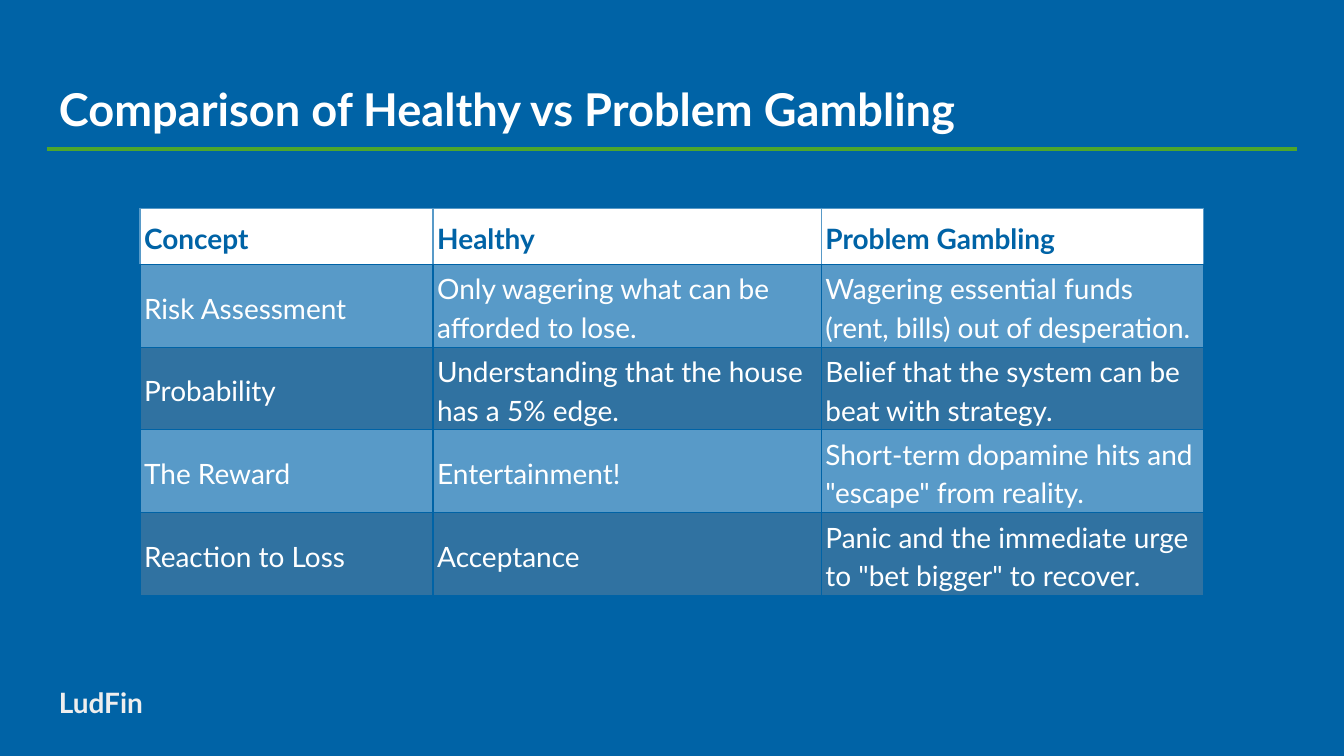
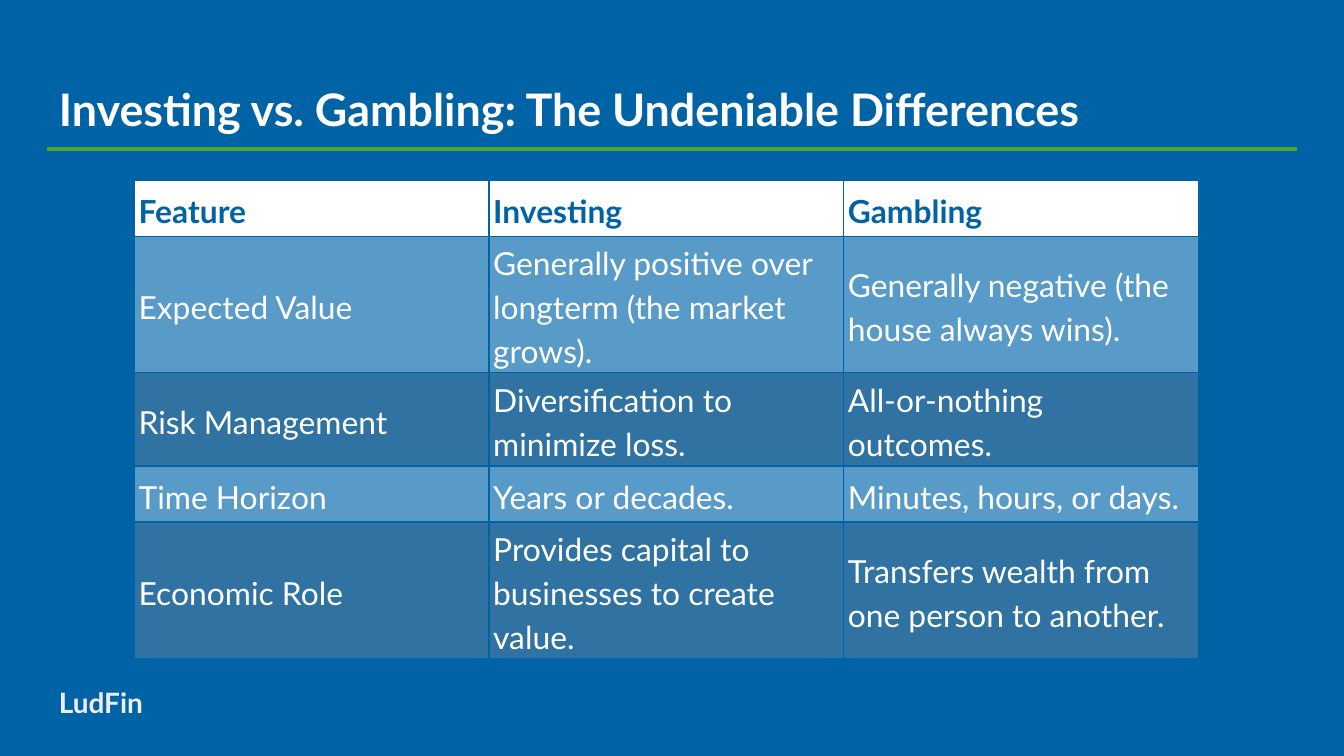
"""Build two slides that compare gambling habits and investing in tables."""
from dataclasses import dataclass

import pptx
import pptx.dml.color
import pptx.enum.shapes
import pptx.enum.text
import pptx.oxml
import pptx.oxml.ns
import pptx.util

Pt = pptx.util.Pt
MIDDLE = pptx.enum.text.MSO_ANCHOR.MIDDLE


@dataclass(frozen=True)
class Theme:
    font: str = "Lato"
    blue: str = "0063A6"
    light_band: str = "589AC8"
    dark_band: str = "3072A1"
    green: str = "4EA62C"
    white: str = "FFFFFF"
    footer: str = "EEEEEE"
    footer_size: float = 15
    rule_width: float = 2.25
    border_width: float = 0.67


theme = Theme()
rgb = pptx.dml.color.RGBColor.from_string


def write(frame, text, size, color, bold):
    frame.word_wrap = True
    frame.text = text
    for span in frame.paragraphs[0].runs:
        span.font.name = theme.font
        span.font.size = Pt(size)
        span.font.bold = bold
        span.font.color.rgb = rgb(color)


def add_borders(cell, outer, bottom):
    properties = cell._tc.get_or_add_tcPr()
    sides = {"lnL": outer, "lnR": outer, "lnT": outer, "lnB": bottom}
    for position, (side, color) in enumerate(sides.items()):
        border = pptx.oxml.parse_xml(
            f'<a:{side} {pptx.oxml.ns.nsdecls("a")} w="{Pt(theme.border_width)}">'
            f'<a:solidFill><a:srgbClr val="{color}"/></a:solidFill></a:{side}>')
        properties.insert(position, border)


pages = [
    {
        "title": "Comparison of Healthy vs Problem Gambling",
        "title_size": 24.2,
        "left": 75, "top": 111.6, "columns": [157, 208, 205],
        "size": 15, "header_border": theme.light_band,
        "rows": [
            ["Concept", "Healthy", "Problem Gambling"],
            ["Risk Assessment", "Only wagering what can be afforded to lose.",
             "Wagering essential funds (rent, bills) out of desperation."],
            ["Probability", "Understanding that the house has a 5% edge.",
             "Belief that the system can be beat with strategy."],
            ["The Reward", "Entertainment!",
             'Short-term dopamine hits and "escape" from reality.'],
            ["Reaction to Loss", "Acceptance",
             'Panic and the immediate urge to "bet bigger" to recover.'],
        ],
    },
    {
        "title": "Investing vs. Gambling: The Undeniable Differences",
        "title_size": 24,
        "left": 72, "top": 96.5, "columns": [190, 190, 190],
        "size": 17, "header_border": theme.blue,
        "rows": [
            ["Feature", "Investing", "Gambling"],
            ["Expected Value", "Generally positive over longterm (the market grows).",
             "Generally negative (the house always wins)."],
            ["Risk Management", "Diversification to minimize loss.",
             "All-or-nothing outcomes."],
            ["Time Horizon", "Years or decades.", "Minutes, hours, or days."],
            ["Economic Role", "Provides capital to businesses to create value.",
             "Transfers wealth from one person to another."],
        ],
    },
]

deck = pptx.Presentation()
deck.slide_width, deck.slide_height = Pt(720), Pt(405)

for content in pages:
    page = deck.slides.add_slide(deck.slide_layouts[6])
    page.background.fill.solid()
    page.background.fill.fore_color.rgb = rgb(theme.blue)

    labels = [
        (content["title"], 35.3, 671, 45.4, content["title_size"], theme.white, MIDDLE),
        ("LudFin", 360, 100, 34.6, theme.footer_size, theme.footer,
         pptx.enum.text.MSO_ANCHOR.TOP),
    ]
    for text, top, width, height, size, color, anchor in labels:
        box = page.shapes.add_textbox(Pt(24.5), Pt(top), Pt(width), Pt(height))
        frame = box.text_frame
        frame.margin_left = frame.margin_right = Pt(7.2)
        frame.margin_top = frame.margin_bottom = Pt(7.2)
        frame.vertical_anchor = anchor
        write(frame, text, size, color, True)

    rule = page.shapes.add_connector(
        pptx.enum.shapes.MSO_CONNECTOR.STRAIGHT, Pt(25), Pt(80), Pt(695), Pt(80))
    rule.line.color.rgb = rgb(theme.green)
    rule.line.width = Pt(theme.rule_width)
    rule._element.spPr.append(
        pptx.oxml.parse_xml(f'<a:effectLst {pptx.oxml.ns.nsdecls("a")}/>'))

    rows, columns = content["rows"], content["columns"]
    table = page.shapes.add_table(
        len(rows), len(columns), Pt(content["left"]), Pt(content["top"]),
        Pt(sum(columns)), Pt(30 * len(rows))).table
    table.first_row = table.horz_banding = False
    for column, width in zip(table.columns, columns):
        column.width = Pt(width)
    for row_number, row in enumerate(rows):
        table.rows[row_number].height = Pt(30)
        header = row_number == 0
        band = theme.light_band if row_number % 2 else theme.dark_band
        for column_number, text in enumerate(row):
            cell = table.cell(row_number, column_number)
            cell.margin_left = cell.margin_right = Pt(2.25)
            cell.margin_top = cell.margin_bottom = Pt(1.5)
            cell.vertical_anchor = MIDDLE
            cell.fill.solid()
            cell.fill.fore_color.rgb = rgb(theme.white if header else band)
            add_borders(cell, content["header_border"] if header else theme.blue, theme.blue)
            write(cell.text_frame, text, content["size"],
                  theme.blue if header else theme.white, header)
            cell.text_frame.paragraphs[0].line_spacing = 1.15

deck.save("out.pptx")
